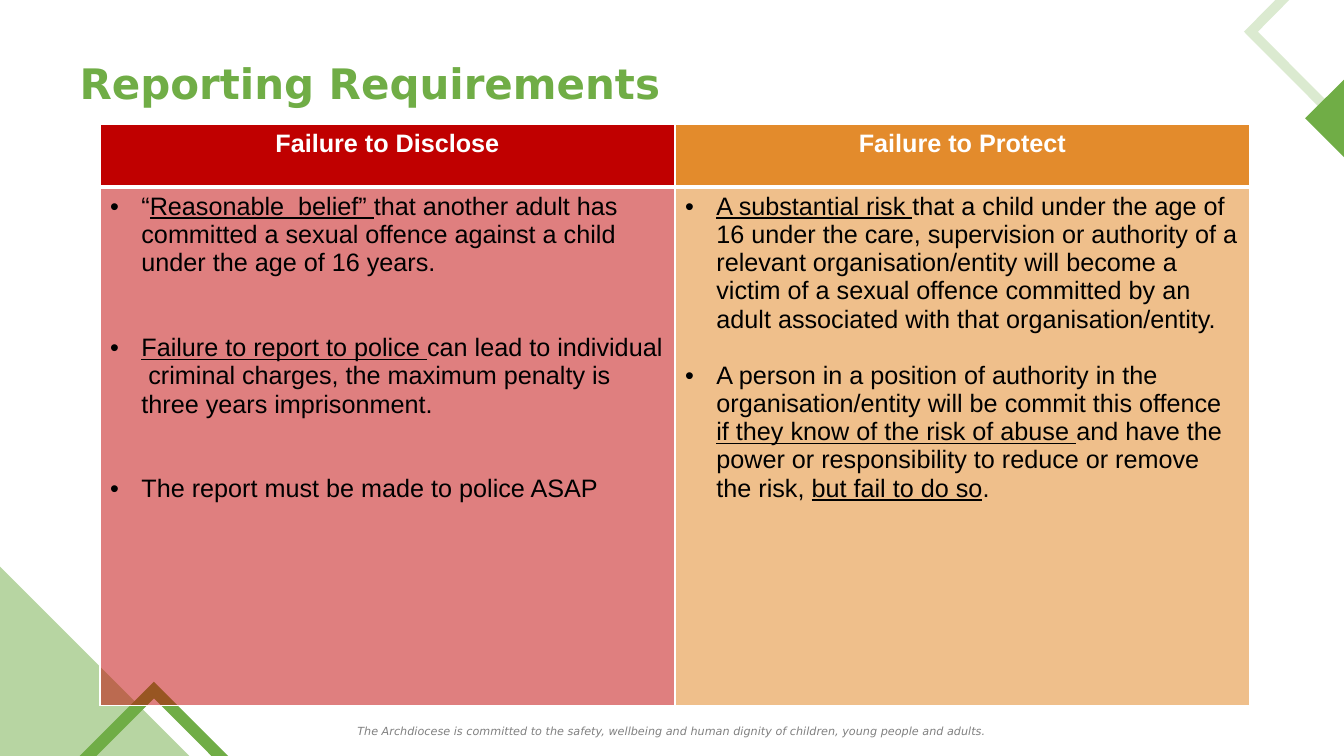
from lxml.etree import SubElement
from pptx import Presentation
from pptx.dml.color import RGBColor
from pptx.enum.text import MSO_ANCHOR, PP_ALIGN
from pptx.oxml import parse_xml
from pptx.oxml.ns import nsdecls, qn
from pptx.util import Cm, Pt

GREEN, RED, ORANGE, WHITE = "70AD46", "C00000", "E38B2C", "FFFFFF"


def set_fill(fill, color, alpha=100):
    """Solid fill; alpha is the opacity in percent."""
    fill.solid()
    fill.fore_color.rgb = RGBColor.from_string(color)
    if alpha < 100:
        clr = next(fill._xPr.iter(qn("a:srgbClr")))
        SubElement(clr, qn("a:alpha"), val=str(alpha * 1000))


def add_run(p, text, size=18, font="Arial", color="000000", bold=False,
            italic=False, underline=False):
    r = p.add_run()
    r.text = text
    f = r.font
    f.size, f.name, f.bold, f.italic = Pt(size), font, bold, italic
    f.underline = underline
    f.color.rgb = RGBColor.from_string(color)


prs = Presentation()
prs.slide_width, prs.slide_height = Cm(33.87), Cm(19.05)
s = prs.slides.add_slide(prs.slide_layouts[5])

# Footer statement
sp = s.shapes.add_textbox(0, Cm(18.14), prs.slide_width, Cm(0.6))
tf = sp.text_frame
tf.word_wrap = True
p = tf.paragraphs[0]
p.alignment = PP_ALIGN.CENTER
add_run(p, "The Archdiocese is committed to the safety, wellbeing and human "
        "dignity of children, young people and adults.",
        size=8, font="DejaVu Sans", color="808080", italic=True)

# Corner decorations: opacity and outline in cm
decorations = [
    (50, [(0, 14.28), (0, 19.05), (4.77, 19.05)]),
    (100, [(3.88, 17.18), (2.01, 19.05), (2.43, 19.05), (3.88, 17.6),
           (5.33, 19.05), (5.75, 19.05)]),
    (100, [(33.93, 1.95), (33.93, 4.02), (32.89, 2.98)]),
    (25, [(33.93, 3.39), (33.93, 3.04), (31.7, 0.8), (32.51, -0.02),
          (32.16, -0.02), (31.35, 0.8)]),
]
for alpha, points in decorations:
    (x, y), *rest = [(Cm(a), Cm(b)) for a, b in points]
    builder = s.shapes.build_freeform(x, y)
    builder.add_line_segments(rest, close=True)
    sp = builder.convert_to_shape()
    sp.shadow.inherit = False
    sp.line.fill.background()
    set_fill(sp.fill, GREEN, alpha)

# Title
title = s.shapes.title
title.left, title.top, title.width, title.height = Cm(1.75), Cm(0.8), Cm(30.48), Cm(2.59)
tf = title.text_frame
tf.vertical_anchor = MSO_ANCHOR.MIDDLE
p = tf.paragraphs[0]
p.alignment = PP_ALIGN.LEFT
add_run(p, "Reporting Requirements", size=30, font="DejaVu Sans", color=GREEN, bold=True)

# Offences: heading, colour, body opacity, gap between bullets,
# bullets as runs of (text, underlined)
offences = [
    ("Failure to Disclose", RED, 50, 40.5, [
        [("“", False), ("Reasonable  belief” ", True),
         ("that another adult has committed a sexual offence against a child "
          "under the age of 16 years.", False)],
        [("Failure to report to police ", True),
         ("can lead to individual  criminal charges, the maximum penalty is "
          "three years imprisonment.", False)],
        [("The report must be made to police ASAP", False)],
    ]),
    ("Failure to Protect", ORANGE, 55, 20, [
        [("A substantial risk ", True),
         ("that a child under the age of 16 under the care, supervision or "
          "authority of a relevant organisation/entity will become a victim of "
          "a sexual offence committed by an adult associated with that "
          "organisation/entity.", False)],
        [("A person in a position of authority in the organisation/entity will "
          "be commit this offence ", False),
         ("if they know of the risk of abuse ", True),
         ("and have the power or responsibility to reduce or remove the risk, ", False),
         ("but fail to do so", True), (".", False)],
    ]),
]
table = s.shapes.add_table(2, 2, Cm(2.52), Cm(3.13), Cm(28.98), Cm(14.65)).table
table.horz_banding = False
table.rows[0].height, table.rows[1].height = Cm(1.59), Cm(13.06)

for col, (heading, color, alpha, gap, bullets) in enumerate(offences):
    head, body = table.cell(0, col), table.cell(1, col)
    set_fill(head.fill, color)
    set_fill(body.fill, color, alpha)
    p = head.text_frame.paragraphs[0]
    p.alignment = PP_ALIGN.CENTER
    add_run(p, heading, color=WHITE, bold=True)

    tf = body.text_frame
    for i, runs in enumerate(bullets):
        p = tf.add_paragraph() if i else tf.paragraphs[0]
        if i:
            p.space_before = Pt(gap)
        pPr = p._p.get_or_add_pPr()
        pPr.set("marL", str(Cm(0.79)))
        pPr.set("indent", str(-Cm(0.79)))
        SubElement(pPr, qn("a:buFont"), typeface="Arial")
        SubElement(pPr, qn("a:buChar"), char="•")
        for text, underlined in runs:
            add_run(p, text, underline=underlined)

    # White borders, thick between heading and body
    for cell, thick in ((head, "lnB"), (body, "lnT")):
        tcPr = cell._tc.get_or_add_tcPr()
        for i, side in enumerate(("lnL", "lnR", "lnT", "lnB")):
            width = Pt(3 if side == thick else 1)
            tcPr.insert(i, parse_xml(
                f'<a:{side} {nsdecls("a")} w="{width}"><a:solidFill>'
                f'<a:srgbClr val="{WHITE}"/></a:solidFill></a:{side}>'))

prs.save("out.pptx")
